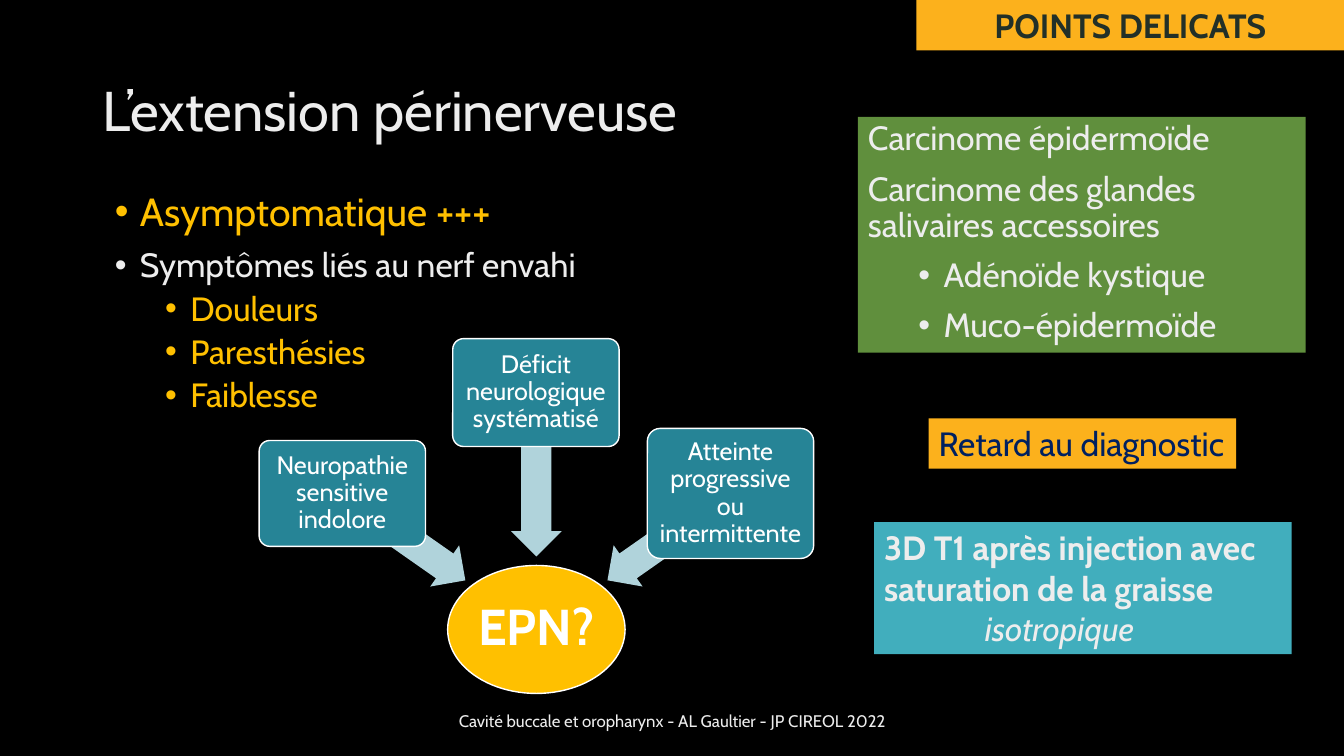
from lxml.etree import SubElement as Sub
from pptx import Presentation
from pptx.dml.color import RGBColor as RGB
from pptx.enum.shapes import MSO_SHAPE as Kind
from pptx.enum.text import MSO_ANCHOR as Anchor, PP_ALIGN as Align
from pptx.oxml.ns import qn
from pptx.util import Inches, Pt

hues = {
    "black": "000000", "white": "FFFFFF", "pale": "EDEDED", "gold": "FFC000",
    "amber": "FCB11C", "dark": "223028", "navy": "002060", "green": "608F3D",
    "teal": "268496", "mist": "B0D3DB", "cyan": "41AEBD",
}
hues = {name: RGB.from_string(code) for name, code in hues.items()}

deck = Presentation()
deck.slide_width, deck.slide_height = Inches(13.33), Inches(7.5)
slide = deck.slides.add_slide(deck.slide_layouts[6])
slide.background.fill.solid()
slide.background.fill.fore_color.rgb = hues["black"]


def draw(kind, spot, fill, line=None):
    shape = slide.shapes.add_shape(kind, *map(Inches, spot))
    shape.shadow.inherit = False
    shape.fill.solid()
    shape.fill.fore_color.rgb = hues[fill]
    if line:
        shape.line.color.rgb = hues[line]
        shape.line.width = Pt(1)
    else:
        shape.line.fill.background()
    return shape


def write(shape, rows, align=Align.LEFT, anchor=Anchor.TOP, inset=None,
          space=None, wrap=True):
    frame = shape.text_frame
    frame.word_wrap = wrap
    frame.vertical_anchor = anchor
    if inset is not None:
        frame.margin_left = frame.margin_right = Inches(inset)
        frame.margin_top = frame.margin_bottom = Inches(inset)
    for i, (text, size, hue, look) in enumerate(rows):
        para = frame.paragraphs[0] if i == 0 else frame.add_paragraph()
        para.text = text
        para.alignment = align
        if space:
            para.line_spacing = space
        if i and "gap" in look:
            para.space_before = Pt(look["gap"])
        props = para._p.get_or_add_pPr()
        if "left" in look:
            props.set("marL", str(Inches(look["left"])))
            props.set("indent", str(Inches(look.get("hang", 0))))
        if "hang" in look:
            Sub(props, qn("a:buFont")).set("typeface", "Arial")
            Sub(props, qn("a:buChar")).set("char", "•")
        font = para.font
        font.name, font.size = "Cabin", Pt(size)
        font.color.rgb = hues[hue]
        font.bold = look.get("bold", False)
        font.italic = look.get("slant", False)


title = slide.shapes.add_textbox(*map(Inches, (0.92, 0.4, 11.5, 1.45)))
write(title, [("L’extension périnerveuse", 40, "pale", {})],
      anchor=Anchor.MIDDLE, space=0.9)

foot = slide.shapes.add_textbox(*map(Inches, (4.42, 6.95, 4.5, 0.4)))
write(foot, [("Cavité buccale et oropharynx - AL Gaultier - JP CIREOL 2022",
              12, "pale", {})], Align.CENTER, Anchor.MIDDLE)

banner = draw(Kind.RECTANGLE, (9.09, 0, 4.24, 0.5), "amber")
write(banner, [("POINTS DELICATS", 24, "dark", {"bold": True})], Align.CENTER)

plain = {"gap": 10}
top = {"left": 0.25, "hang": -0.25, "gap": 10}
deep = {"left": 0.75, "hang": -0.25, "gap": 10}
sub = {"left": 0.75, "hang": -0.25, "gap": 5}

types = draw(Kind.RECTANGLE, (8.51, 1.16, 4.44, 2.34), "green")
write(types, [
    ("Carcinome épidermoïde", 24, "pale", plain),
    ("Carcinome des glandes salivaires accessoires", 24, "pale", plain),
    ("Adénoïde kystique", 24, "pale", deep),
    ("Muco-épidermoïde", 24, "pale", deep),
], space=0.9)

signs = slide.shapes.add_textbox(*map(Inches, (1.04, 1.86, 5.5, 4.76)))
write(signs, [
    ("Asymptomatique +++", 28, "gold", top),
    ("Symptômes liés au nerf envahi", 24, "pale", top),
    ("Douleurs", 24, "gold", sub),
    ("Paresthésies", 24, "gold", sub),
    ("Faiblesse", 24, "gold", sub),
], space=0.9)

core = draw(Kind.OVAL, (4.44, 5.61, 1.76, 1.27), "gold", "white")
write(core, [("EPN?", 36, "white", {"bold": True})],
      Align.CENTER, Anchor.MIDDLE, 0.03, 0.9)

clues = [
    ("Neuropathie sensitive indolore",
     (2.57, 4.37, 1.65, 1.05), (3.26, 5.08, 1.49, 0.5), 215),
    ("Déficit neurologique systématisé",
     (4.49, 3.36, 1.65, 1.07), (4.51, 4.46, 1.62, 0.5), 270),
    ("Atteinte progressive ou intermittente",
     (6.42, 4.25, 1.65, 1.29), (5.89, 5.08, 1.49, 0.5), 325),
]
for text, spot, path, turn in clues:
    arrow = draw(Kind.LEFT_ARROW, path, "mist")
    arrow.adjustments[0] = 0.6
    arrow.rotation = turn
    clue = draw(Kind.ROUNDED_RECTANGLE, spot, "teal", "white")
    clue.adjustments[0] = 0.1
    write(clue, [(text, 18, "white", {})],
          Align.CENTER, Anchor.MIDDLE, 0.06, 0.9)

delay = draw(Kind.RECTANGLE, (9.21, 4.15, 3.05, 0.5), "amber")
write(delay, [("Retard au diagnostic", 24, "navy", {})], wrap=False)

scan = draw(Kind.RECTANGLE, (8.67, 5.18, 4.14, 1.31), "cyan")
write(scan, [
    ("3D T1 après injection avec saturation de la graisse", 24, "pale",
     {"bold": True}),
    ("isotropique", 24, "pale", {"left": 1, "slant": True}),
])

deck.save("out.pptx")
